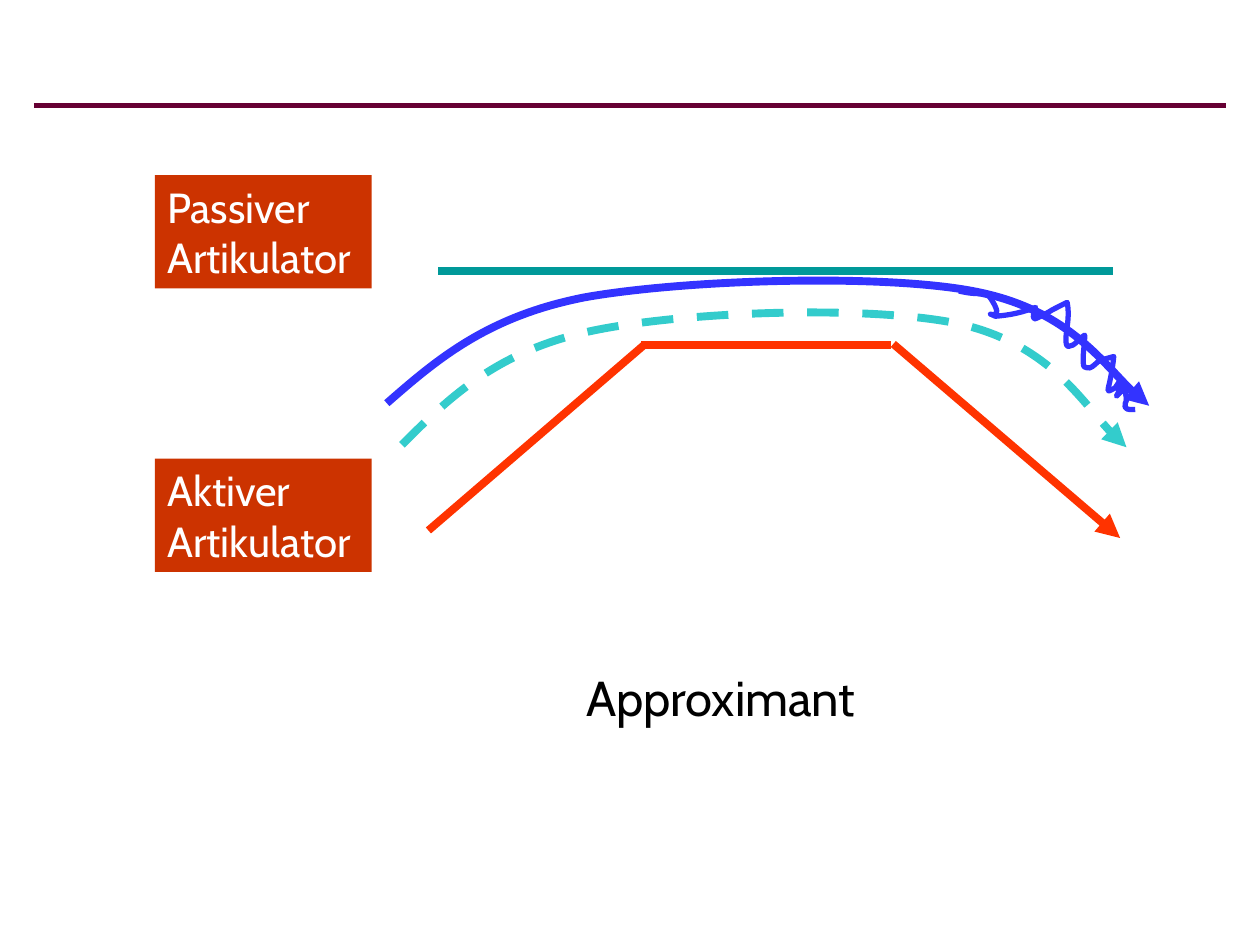
from pptx import Presentation
from pptx.dml.color import RGBColor
from pptx.enum import dml, shapes, text
from pptx.oxml import ns, xmlchemy
from pptx.util import Inches, Pt

COLORS = {
    "rule": "660033", "label": "CC3300", "white": "FFFFFF", "black": "000000",
    "passive": "009999", "active": "FF3300", "airflow": "3333FF", "neutral": "33CCCC",
}
FONT = "Cabin"

presentation = Presentation()
presentation.slide_width, presentation.slide_height = Inches(10), Inches(7.5)
slide = presentation.slides.add_slide(presentation.slide_layouts[6])


def style_line(shape, color, width, arrow=False):
    shape.line.color.rgb = RGBColor.from_string(COLORS[color])
    shape.line.width = Pt(width)
    if arrow:
        tail = xmlchemy.OxmlElement("a:tailEnd")
        tail.set("type", "triangle")
        shape.line._get_or_add_ln().append(tail)
    properties = shape._element.spPr
    if properties.find(ns.qn("a:effectLst")) is None:
        properties.append(xmlchemy.OxmlElement("a:effectLst"))


def add_curve(parent, points):
    """Draw a cubic Bézier chain: a start point, then three points per segment."""
    corners = [(Inches(x), Inches(y)) for x, y in points]
    builder = parent.build_freeform(*corners[0])
    builder.add_line_segments(corners[1:], close=False)
    shape = builder.convert_to_shape()
    shape.fill.background()
    segments = list(shape._element.iter(ns.qn("a:lnTo")))
    for start in range(0, len(segments), 3):
        curve = xmlchemy.OxmlElement("a:cubicBezTo")
        segments[start].addprevious(curve)
        for segment in segments[start:start + 3]:
            curve.append(segment[0])
            segment.getparent().remove(segment)
    return shape


# Header rule and passive articulator
for x1, x2, y, color, width in [(0.27, 9.73, 0.84, "rule", 3),
                                (3.48, 8.83, 2.15, "passive", 4.5)]:
    line = slide.shapes.add_connector(
        shapes.MSO_CONNECTOR.STRAIGHT, Inches(x1), Inches(y), Inches(x2), Inches(y))
    style_line(line, color, width)

# Articulator labels
for top, first_word in [(3.64, "Aktiver "), (1.39, "Passiver ")]:
    label = slide.shapes.add_shape(
        shapes.MSO_SHAPE.RECTANGLE, Inches(1.23), Inches(top), Inches(1.72), Inches(0.9))
    label.shadow.inherit = False
    label.fill.solid()
    label.fill.fore_color.rgb = RGBColor.from_string(COLORS["label"])
    label.line.fill.background()
    frame = label.text_frame
    frame.word_wrap = False
    frame.vertical_anchor = text.MSO_ANCHOR.TOP
    paragraph = frame.paragraphs[0]
    paragraph.alignment = text.PP_ALIGN.LEFT
    for index, word in enumerate([first_word, "Artikulator"]):
        if index:
            paragraph.add_line_break()
        run = paragraph.add_run()
        run.text = word
        run.font.name, run.font.size = FONT, Pt(24)
        run.font.color.rgb = RGBColor.from_string(COLORS["white"])

# Dashed curve
dashed_curve = add_curve(slide.shapes, [
    (3.19, 3.53), (3.56, 3.16), (3.94, 2.79), (4.68, 2.63), (5.42, 2.47),
    (6.9, 2.42), (7.61, 2.57), (8.32, 2.73), (8.72, 3.38), (8.94, 3.55)])
dashed_curve.line.dash_style = dml.MSO_LINE.DASH
style_line(dashed_curve, "neutral", 4.5, arrow=True)

# Active articulator and airflow
group = slide.shapes.add_group_shape()
for x1, y1, x2, y2, arrow in [(3.4, 4.21, 5.11, 2.74, False),
                              (5.09, 2.74, 7.07, 2.74, False),
                              (7.09, 2.73, 8.89, 4.27, True)]:
    line = group.shapes.add_connector(
        shapes.MSO_CONNECTOR.STRAIGHT, Inches(x1), Inches(y1), Inches(x2), Inches(y2))
    style_line(line, "active", 4.5, arrow)

airflow = add_curve(group.shapes, [
    (3.07, 3.2), (3.47, 2.85), (3.87, 2.51), (4.64, 2.36), (5.42, 2.22),
    (6.98, 2.17), (7.72, 2.31), (8.47, 2.45), (8.89, 3.06), (9.12, 3.22)])
style_line(airflow, "airflow", 4.5, arrow=True)

turbulence = add_curve(group.shapes, [
    (7.61, 2.31),
    (7.66, 2.32), (7.7, 2.33), (7.75, 2.33),
    (7.78, 2.34), (7.83, 2.31), (7.85, 2.35),
    (8.02, 2.59), (7.77, 2.45), (7.9, 2.51),
    (8.03, 2.5), (8.11, 2.48), (8.22, 2.44),
    (8.21, 2.47), (8.19, 2.52), (8.21, 2.53),
    (8.21, 2.54), (8.34, 2.47), (8.35, 2.46),
    (8.39, 2.44), (8.47, 2.4), (8.47, 2.4),
    (8.49, 2.5), (8.47, 2.58), (8.46, 2.68),
    (8.46, 2.71), (8.46, 2.75), (8.48, 2.75),
    (8.53, 2.75), (8.57, 2.68), (8.61, 2.66),
    (8.61, 2.74), (8.59, 2.82), (8.6, 2.9),
    (8.6, 2.92), (8.64, 2.92), (8.65, 2.92),
    (8.68, 2.91), (8.7, 2.88), (8.73, 2.86),
    (8.77, 2.85), (8.8, 2.84), (8.84, 2.83),
    (8.81, 3.12), (8.75, 3.13), (8.85, 3.08),
    (8.88, 3.04), (8.93, 2.94), (8.89, 3.08),
    (8.87, 3.15), (8.82, 3.18), (8.93, 3.08),
    (8.93, 3.12), (8.94, 3.14), (8.94, 3.18),
    (8.94, 3.19), (8.92, 3.21), (8.93, 3.23),
    (8.94, 3.26), (9, 3.25), (9.01, 3.25)])
style_line(turbulence, "airflow", 3)

# Caption
caption = slide.shapes.add_textbox(Inches(4.53), Inches(5.25), Inches(2.38), Inches(0.57))
caption.text_frame.word_wrap = False
paragraph = caption.text_frame.paragraphs[0]
paragraph.alignment = text.PP_ALIGN.CENTER
run = paragraph.add_run()
run.text = "Approximant"
run.font.name, run.font.size = FONT, Pt(28)
run.font.color.rgb = RGBColor.from_string(COLORS["black"])

presentation.save("out.pptx")
